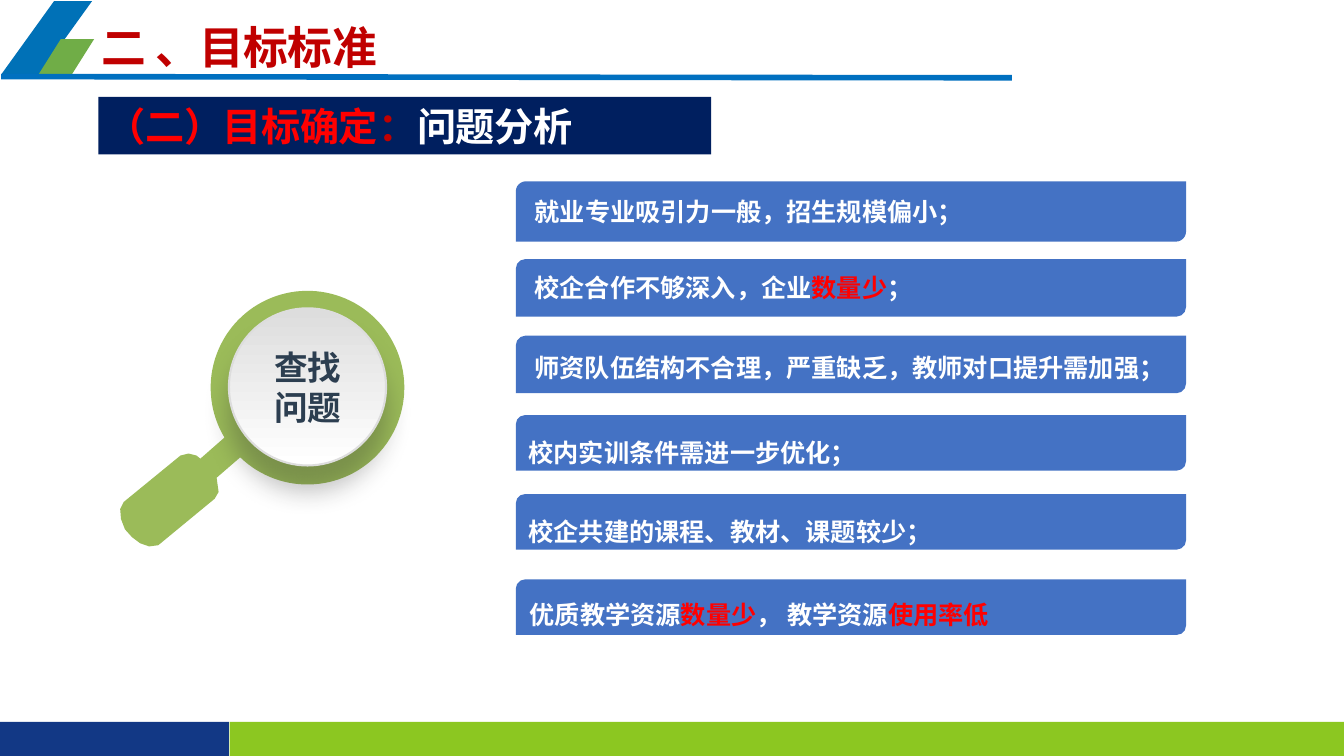
from math import cos, radians, sin

from lxml import etree
from pptx import Presentation
from pptx.dml.color import RGBColor
from pptx.enum.shapes import MSO_CONNECTOR, MSO_SHAPE
from pptx.enum.text import MSO_ANCHOR, MSO_AUTO_SIZE, PP_ALIGN
from pptx.oxml.ns import qn
from pptx.util import Cm, Pt

RECT = MSO_SHAPE.RECTANGLE
SLANT = MSO_SHAPE.PARALLELOGRAM
BAR = MSO_SHAPE.ROUND_2_DIAG_RECTANGLE
OVAL = MSO_SHAPE.OVAL
LEFT, CENTER = PP_ALIGN.LEFT, PP_ALIGN.CENTER

FONT = "Noto Sans CJK SC"
COLORS = {
    "logo_blue": "0071B7", "logo_green": "70AD47", "rule": "0070C0",
    "foot_blue": "123885", "foot_green": "8CC721", "banner": "001F5F",
    "bar": "4472C4", "magnifier": "9BBB59", "lens": "DDDDDD",
    "slate": "2C3E50", "dark_red": "C00000", "red": "FF0000",
    "white": "FFFFFF", "shadow": "262626",
}

# Top, height, left inset (cm), line spacing, coloured runs
BARS = [
    (4.57, 1.52, 0.4, 1.0, [("就业专业吸引力一般，招生规模偏小；", "white")]),
    (6.53, 1.45, 0.4, 1.0, [("校企合作不够深入，企业", "white"),
                            ("数量少", "red"), ("；", "white")]),
    (8.46, 1.45, 0.4, Pt(26),
     [("师资队伍结构不合理，严重缺乏，教师对口提升需加强；", "white")]),
    (10.46, 1.4, 0.25, Pt(35), [("校内实训条件需进一步优化；", "white")]),
    (12.45, 1.4, 0.25, Pt(35), [("校企共建的课程、教材、课题较少；", "white")]),
    (14.6, 1.4, 0.28, 1.5, [("优质教学资源", "white"), ("数量少", "red"),
                            ("， 教学资源", "white"), ("使用率低", "red")]),
]

# Outline of the magnifier grip, from the upper to the lower side of the neck
GRIP = [(5.05, 11.56), (4.95, 11.48), (4.75, 11.43), (4.55, 11.48),
        (3.12, 12.65), (3.03, 12.83), (3.05, 13.08), (3.15, 13.34),
        (3.33, 13.54), (3.53, 13.69), (3.76, 13.77), (3.99, 13.74),
        (5.41, 12.57), (5.51, 12.4), (5.46, 12.04)]


def rgb(name):
    return RGBColor.from_string(COLORS[name])


def add_shape(slide, kind, box, color, adj=None):
    sp = slide.shapes.add_shape(kind, *[Cm(v) for v in box])
    sp.shadow.inherit = False
    sp.fill.solid()
    sp.fill.fore_color.rgb = rgb(color)
    sp.line.fill.background()
    if adj is not None:
        sp.adjustments[0] = adj
    return sp


def add_runs(p, runs, size, align=LEFT, spacing=1.0, tracking=0):
    p.alignment = align
    p.line_spacing = spacing
    for text, color in runs:
        r = p.add_run()
        r.text = text
        r.font.size = Pt(size)
        r.font.bold = True
        r.font.name = FONT
        r.font.color.rgb = rgb(color)
        rPr = r.font._element
        etree.SubElement(rPr, qn("a:ea")).set("typeface", FONT)
        if tracking:
            rPr.set("spc", str(tracking))


def clear_margins(tf):
    tf.margin_left = tf.margin_right = tf.margin_top = tf.margin_bottom = 0


def add_text_box(slide, box):
    tf = slide.shapes.add_textbox(*[Cm(v) for v in box]).text_frame
    tf.word_wrap = True
    clear_margins(tf)
    return tf


def add_rule(slide, x1, y1, x2, y2, color, width):
    line = slide.shapes.add_connector(
        MSO_CONNECTOR.STRAIGHT, Cm(x1), Cm(y1), Cm(x2), Cm(y2))
    line.line.color.rgb = rgb(color)
    line.line.width = Pt(width)
    etree.SubElement(line._element.spPr, qn("a:effectLst"))


def add_lens_shadow(sp):
    effects = sp._element.spPr.find(qn("a:effectLst"))
    shadow = etree.SubElement(
        effects, qn("a:outerShdw"), blurRad=str(Pt(18)), dist=str(Pt(18)),
        dir="5400000", algn="t", rotWithShape="0")
    clr = etree.SubElement(shadow, qn("a:srgbClr"), val=COLORS["shadow"])
    etree.SubElement(clr, qn("a:alpha"), val="28000")


def add_magnifier(slide):
    # Ring and handle in one outline: the arc leaves a gap for the neck
    cx, cy, radius = 7.75, 9.77, 2.44
    arc = [(cx + radius * cos(radians(a)), cy + radius * sin(radians(a)))
           for a in range(134, -212, -3)]
    points = [(Cm(x), Cm(y)) for x, y in arc + GRIP]
    builder = slide.shapes.build_freeform(*points[0])
    builder.add_line_segments(points[1:], close=True)
    sp = builder.convert_to_shape()
    sp.shadow.inherit = False
    sp.fill.solid()
    sp.fill.fore_color.rgb = rgb("magnifier")
    sp.line.fill.background()

    # Lens
    lens = add_shape(slide, OVAL, (5.77, 7.77, 3.96, 3.96), "lens")
    lens.fill.gradient()
    lens.fill.gradient_angle = 270
    for stop, color in zip(lens.fill.gradient_stops, ("lens", "white")):
        stop.color.rgb = rgb(color)
    lens.line.color.rgb = rgb("lens")
    lens.line.width = Pt(1.5)
    add_lens_shadow(lens)

    # Label
    tf = add_text_box(slide, (6.65, 8.74, 2.21, 2.05))
    tf.word_wrap = False
    add_runs(tf.paragraphs[0], [("查找", "slate")], 24, CENTER)
    add_runs(tf.add_paragraph(), [("问题", "slate")], 24, CENTER)


def add_bar(slide, top, height, inset, spacing, runs):
    tf = add_shape(slide, BAR, (13, top, 16.89, height), "bar").text_frame
    tf.word_wrap = True
    tf.vertical_anchor = MSO_ANCHOR.MIDDLE
    tf.margin_left = Cm(inset)
    add_runs(tf.paragraphs[0], runs, 18, spacing=spacing)


def add_title(slide):
    title = slide.shapes.title
    title.left, title.top, title.width, title.height = (
        Cm(1.96), Cm(0.2), Cm(8.13), Cm(1.65))
    tf = title.text_frame
    tf.auto_size = MSO_AUTO_SIZE.NONE
    tf.vertical_anchor = MSO_ANCHOR.BOTTOM
    clear_margins(tf)
    add_runs(tf.paragraphs[0], [("二 、目标标准", "dark_red")], 32, CENTER,
             tracking=-40)


def main():
    prs = Presentation()
    prs.slide_width, prs.slide_height = Cm(33.87), Cm(19.05)
    slide = prs.slides.add_slide(prs.slide_layouts[5])

    # Header and footer
    add_shape(slide, SLANT, (0.03, 0.03, 2.29, 1.85), "logo_blue", 0.72)
    add_shape(slide, SLANT, (0.97, 0.99, 1.4, 0.89), "logo_green", 0.63)
    add_shape(slide, RECT, (5.79, 18.19, 28.08, 0.94), "foot_green")
    add_shape(slide, RECT, (0, 18.19, 5.77, 0.94), "foot_blue")
    add_rule(slide, 0.03, 1.93, 25.5, 1.96, "rule", 4)
    add_title(slide)

    # Section banner
    add_shape(slide, RECT, (2.48, 2.44, 15.44, 1.45), "banner")
    tf = add_text_box(slide, (2.69, 2.57, 13.34, 1.22))
    add_runs(tf.paragraphs[0],
             [("（二）目标确定", "red"), ("：", "dark_red"),
              ("问题分析", "white")], 28, tracking=-30)

    # Problems found
    add_magnifier(slide)
    for bar in BARS:
        add_bar(slide, *bar)

    prs.save("out.pptx")


if __name__ == "__main__":
    main()
